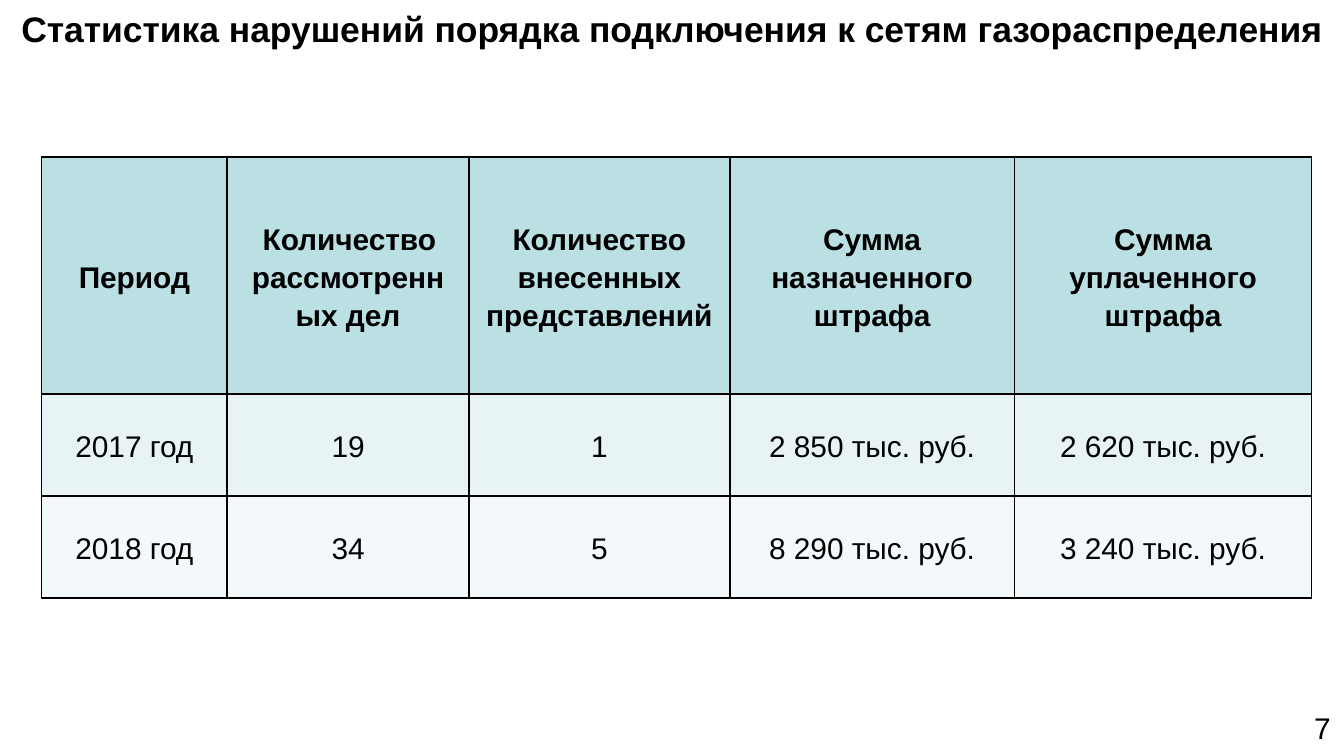
import pptx
import pptx.dml.color
import pptx.enum.text
import pptx.oxml
import pptx.oxml.ns
import pptx.util

Inches = pptx.util.Inches
Pt = pptx.util.Pt
ALIGN = pptx.enum.text.PP_ALIGN
ANCHOR = pptx.enum.text.MSO_ANCHOR

COLORS = {
    "text": "000000",
    "border": "000000",
    "header": "BBE0E3",
    "year_2017": "E7F3F4",
    "year_2018": "F3F9FA",
}
COLUMN_WIDTHS = [1.38, 1.8, 1.94, 2.12, 2.21]
ROW_HEIGHTS = [1.76, 0.76, 0.76]
ROW_FILLS = ["header", "year_2017", "year_2018"]
STATISTICS = [
    ["Период", "Количество рассмотренных дел", "Количество внесенных представлений",
     "Сумма назначенного штрафа", "Сумма уплаченного штрафа"],
    ["2017 год", "19", "1", "2 850 тыс. руб.", "2 620 тыс. руб."],
    ["2018 год", "34", "5", "8 290 тыс. руб.", "3 240 тыс. руб."],
]
CELL_PARAGRAPH = {"alignment": ALIGN.CENTER, "line_spacing": 1.15, "space_after": Pt(10)}


def rgb(color):
    return pptx.dml.color.RGBColor.from_string(COLORS[color])


def apply_format(target, values):
    for attribute, value in values.items():
        setattr(target, attribute, value)


def write_text(frame, text, size, bold, paragraph_format):
    frame.text = text
    paragraph = frame.paragraphs[0]
    apply_format(paragraph, paragraph_format)
    font = paragraph.runs[0].font
    apply_format(font, {"name": "Arial", "size": Pt(size), "bold": bold})
    font.color.rgb = rgb("text")


def add_title(slide, text):
    title = slide.shapes.title
    apply_format(title, {"left": 0, "top": 0, "width": Inches(10), "height": Inches(0.42)})
    apply_format(title.text_frame, {
        "word_wrap": True,
        "vertical_anchor": ANCHOR.TOP,
        "auto_size": pptx.enum.text.MSO_AUTO_SIZE.SHAPE_TO_FIT_TEXT,
    })
    write_text(title.text_frame, text, 19, True, {"alignment": ALIGN.CENTER})


def add_page_number(slide, number):
    page_number = slide.shapes.add_textbox(Inches(7.67), Inches(5.23), Inches(2.33), Inches(0.25))
    page_number.text_frame.word_wrap = True
    write_text(page_number.text_frame, number, 16, False, {"alignment": ALIGN.RIGHT})


def add_borders(cell):
    properties = cell._tc.get_or_add_tcPr()
    for side in ("lnL", "lnR", "lnT", "lnB"):
        properties.append(pptx.oxml.parse_xml(
            f'<a:{side} {pptx.oxml.ns.nsdecls("a")} w="{Pt(1)}"><a:solidFill>'
            f'<a:srgbClr val="{COLORS["border"]}"/></a:solidFill></a:{side}>'))


def add_statistics(slide):
    statistics = slide.shapes.add_table(
        len(ROW_HEIGHTS), len(COLUMN_WIDTHS), Inches(0.31), Inches(1.17),
        Inches(sum(COLUMN_WIDTHS)), Inches(sum(ROW_HEIGHTS))).table
    for column, width in zip(statistics.columns, COLUMN_WIDTHS):
        column.width = Inches(width)
    for row, height, fill, texts in zip(statistics.rows, ROW_HEIGHTS, ROW_FILLS, STATISTICS):
        row.height = Inches(height)
        for cell, text in zip(row.cells, texts):
            cell.vertical_anchor = ANCHOR.MIDDLE
            add_borders(cell)
            cell.fill.solid()
            cell.fill.fore_color.rgb = rgb(fill)
            write_text(cell.text_frame, text, 16, fill == "header", CELL_PARAGRAPH)
    cases_heading = statistics.cell(0, 1).text_frame.paragraphs[0]
    cases_heading._p.get_or_add_pPr().set("indent", str(Inches(0.02)))


def main():
    presentation = pptx.Presentation()
    presentation.slide_width = Inches(10)
    presentation.slide_height = Inches(10 * 9 / 16)
    slide = presentation.slides.add_slide(presentation.slide_layouts[5])
    add_page_number(slide, "7")
    add_title(slide, "Статистика нарушений порядка подключения к сетям газораспределения")
    add_statistics(slide)
    presentation.save("out.pptx")


if __name__ == "__main__":
    main()
